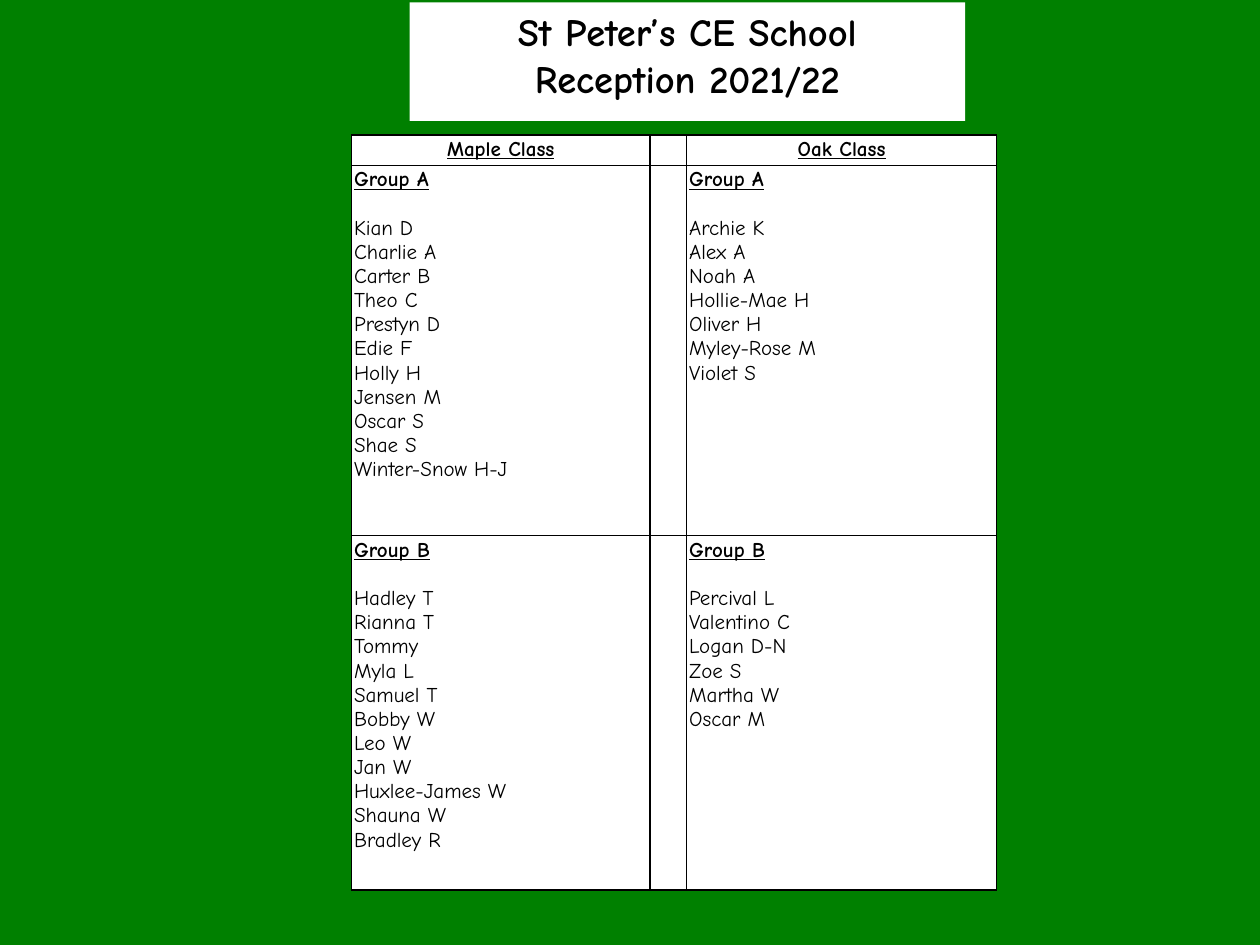
from dataclasses import dataclass

from lxml.etree import SubElement
from pptx import Presentation
from pptx.dml.color import RGBColor
from pptx.enum.shapes import MSO_SHAPE
from pptx.enum.text import MSO_ANCHOR, PP_ALIGN
from pptx.oxml.ns import qn
from pptx.util import Inches, Pt


@dataclass(frozen=True)
class Theme:
    """Colours, type and line widths of the page."""
    font: str = "Comic Neue"
    green: RGBColor = RGBColor(0, 128, 0)
    white: RGBColor = RGBColor(255, 255, 255)
    black: RGBColor = RGBColor(0, 0, 0)
    title: float = 22
    body: float = 12
    line: float = 13.8
    thick: float = 1
    thin: float = 0.5


@dataclass(frozen=True)
class Group:
    """A named group of pupils and its cell in the class table."""
    row: int
    column: int
    name: str
    pupils: tuple[str, ...]


THEME = Theme()
COLUMNS = (2.37, 0.29, 2.46)
ROWS = (0.24, 2.94, 2.81)
TITLE = ("St Peter’s CE School", "Reception 2021/22")
CLASSES = {0: "Maple Class", 2: "Oak Class"}
GROUPS = (
    Group(1, 0, "Group A", (
        "Kian D", "Charlie A", "Carter B", "Theo C", "Prestyn D", "Edie F",
        "Holly H", "Jensen M", "Oscar S", "Shae S", "Winter-Snow H-J")),
    Group(1, 2, "Group A", (
        "Archie K", "Alex A", "Noah A", "Hollie-Mae H", "Oliver H",
        "Myley-Rose M", "Violet S")),
    Group(2, 0, "Group B", (
        "Hadley T", "Rianna T", "Tommy", "Myla L", "Samuel T", "Bobby W",
        "Leo W", "Jan W", "Huxlee-James W", "Shauna W", "Bradley R")),
    Group(2, 2, "Group B", (
        "Percival L", "Valentino C", "Logan D-N", "Zoe S", "Martha W",
        "Oscar M")),
)


def apply(target, **values) -> None:
    """Set each named value on the target."""
    for name, value in values.items():
        setattr(target, name, value)


def paint(fill, colour: RGBColor) -> None:
    """Make a fill solid in one colour."""
    fill.solid()
    fill.fore_color.rgb = colour


def write(para, text: str, size: float = THEME.body, **style) -> None:
    """Write one styled span into a paragraph."""
    span = para.add_run()
    span.text = text
    apply(span.font, name=THEME.font, size=Pt(size), **style)
    span.font.color.rgb = THEME.black


def inset(box, inches: float) -> None:
    """Give a cell or text frame equal margins and top anchoring."""
    sides = ("left", "top", "right", "bottom")
    apply(box, vertical_anchor=MSO_ANCHOR.TOP,
          **{f"margin_{side}": Inches(inches) for side in sides})


def draw_title(page) -> None:
    """Draw the white title panel."""
    panel = page.shapes.add_shape(
        MSO_SHAPE.RECTANGLE, *map(Inches, (3.25, 0.02, 4.41, 0.94)))
    panel.shadow.inherit = False
    paint(panel.fill, THEME.white)
    panel.line.fill.background()
    frame = panel.text_frame
    inset(frame, 0.04)
    frame.word_wrap = True
    for index, text in enumerate(TITLE):
        para = frame.add_paragraph() if index else frame.paragraphs[0]
        apply(para, alignment=PP_ALIGN.CENTER, space_before=Pt(1))
        write(para, text, THEME.title, bold=True)


def draw_borders(cell, row: int, column: int) -> None:
    """Rule a cell with a thick outer frame and thin inner lines."""
    thick_sides = {
        "L": column < 2,
        "R": column in (0, len(COLUMNS) - 1),
        "T": row == 0,
        "B": row == len(ROWS) - 1,
    }
    properties = cell._tc.get_or_add_tcPr()
    for index, (side, thick) in enumerate(thick_sides.items()):
        width = Pt(THEME.thick if thick else THEME.thin)
        line = properties.makeelement(qn(f"a:ln{side}"), {"w": str(width)})
        fill = SubElement(line, qn("a:solidFill"))
        SubElement(fill, qn("a:srgbClr"), val=str(THEME.black))
        properties.insert(index, line)


def fill_group(cell, group: Group) -> None:
    """Write a group heading and its pupils."""
    frame = cell.text_frame
    heading = frame.paragraphs[0]
    heading.space_after = Pt(THEME.line)
    write(heading, group.name, bold=True, underline=True)
    for pupil in group.pupils:
        write(frame.add_paragraph(), pupil)


def draw_table(page) -> None:
    """Draw the table of classes and groups."""
    table = page.shapes.add_table(
        len(ROWS), len(COLUMNS),
        *map(Inches, (2.79, 1.07, sum(COLUMNS), sum(ROWS)))).table
    apply(table, first_row=False, horz_banding=False)
    for column, width in zip(table.columns, COLUMNS):
        column.width = Inches(width)
    for row, height in zip(table.rows, ROWS):
        row.height = Inches(height)
    for row in range(len(ROWS)):
        for column in range(len(COLUMNS)):
            cell = table.cell(row, column)
            inset(cell, 0.02)
            paint(cell.fill, THEME.white)
            draw_borders(cell, row, column)
            if column not in CLASSES:
                SubElement(cell.text_frame.paragraphs[0]._p,
                           qn("a:endParaRPr"), sz=str(THEME.body * 100))
    for column, name in CLASSES.items():
        para = table.cell(0, column).text_frame.paragraphs[0]
        para.alignment = PP_ALIGN.CENTER
        write(para, name, bold=True, underline=True)
    for group in GROUPS:
        fill_group(table.cell(group.row, group.column), group)


def main() -> None:
    """Build and save the class list."""
    deck = Presentation()
    apply(deck, slide_width=Inches(10), slide_height=Inches(7.5))
    page = deck.slides.add_slide(deck.slide_layouts[6])
    paint(page.background.fill, THEME.green)
    draw_table(page)
    draw_title(page)
    deck.save("out.pptx")


if __name__ == "__main__":
    main()
